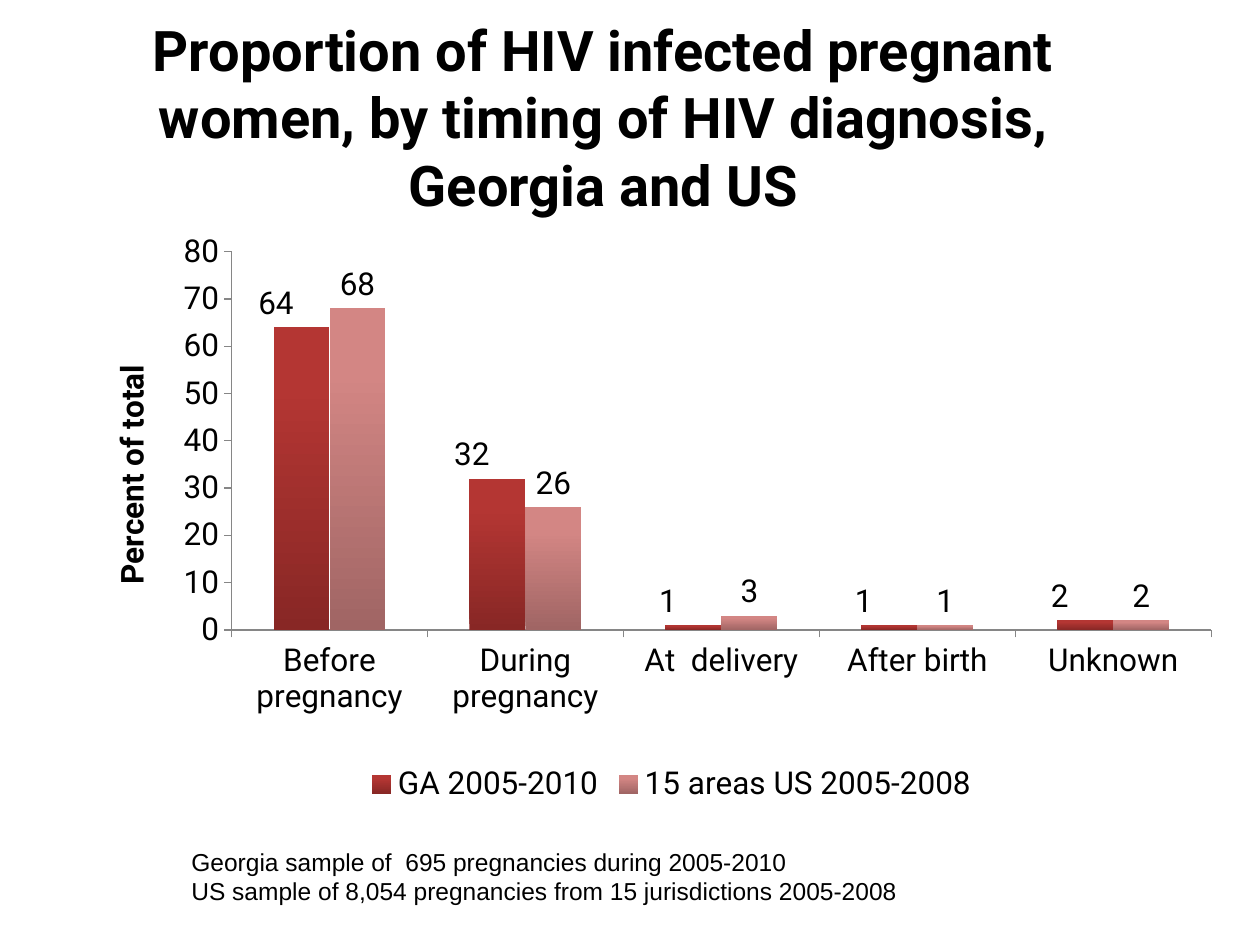
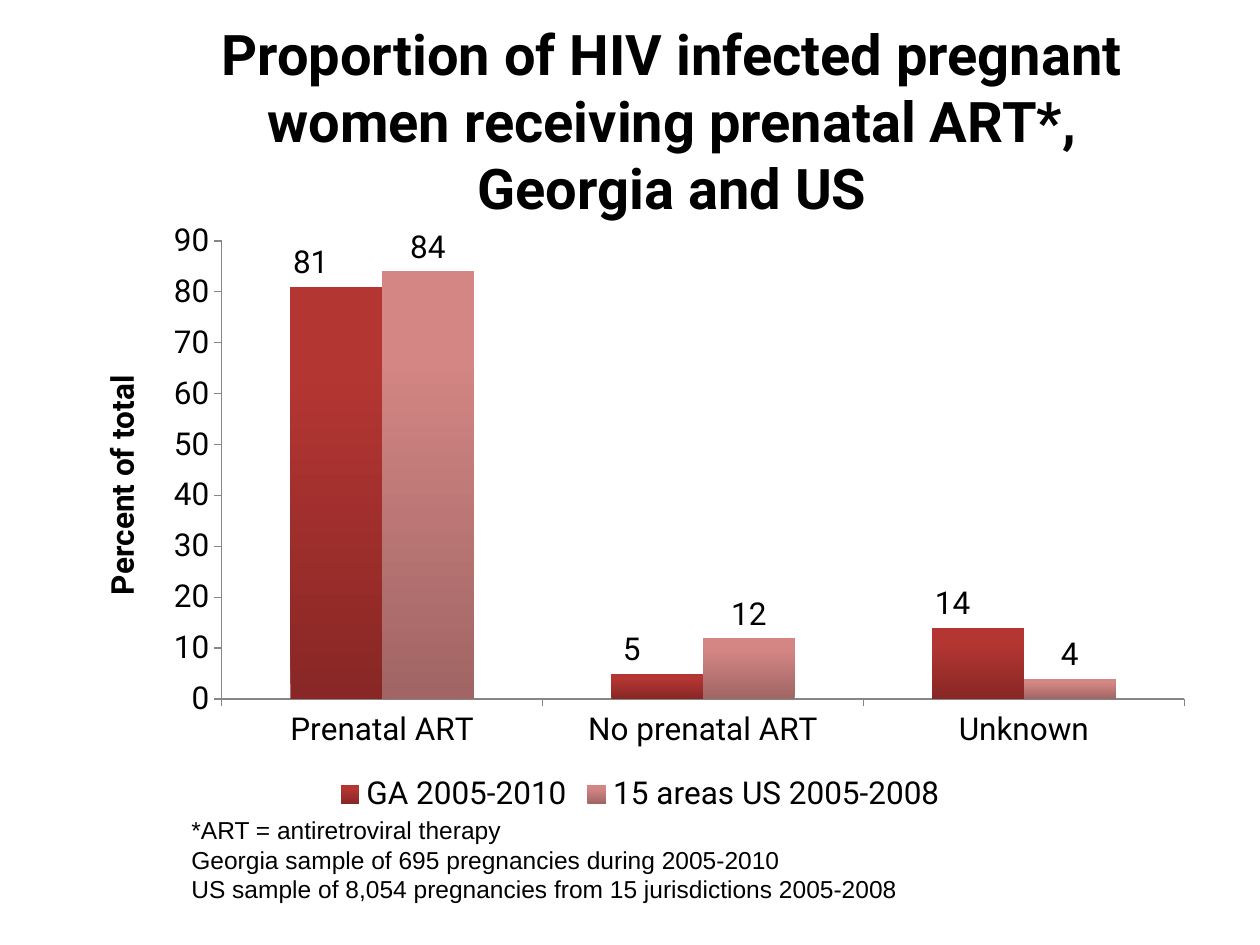
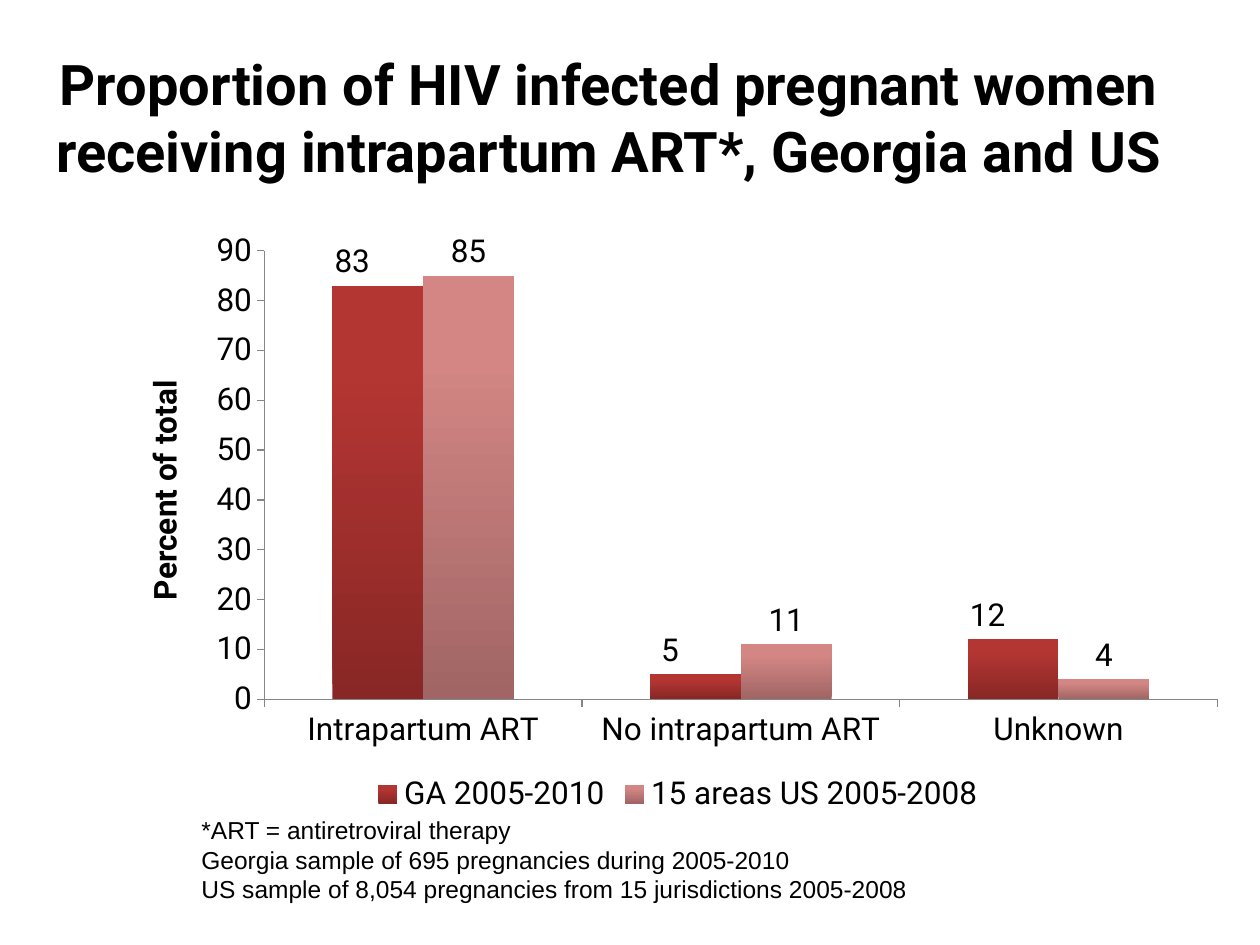
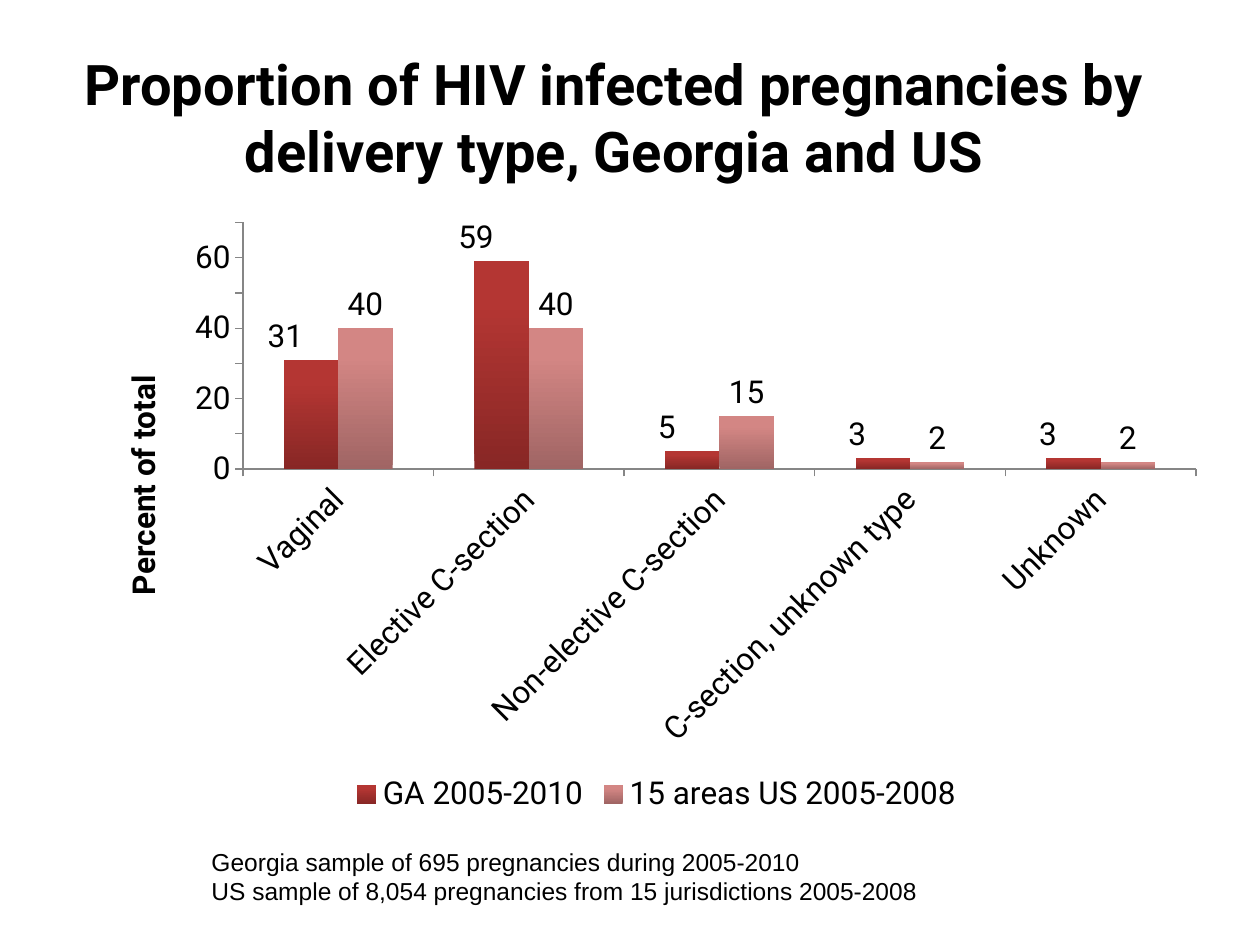
import pptx
import pptx.chart.data
import pptx.dml.color
import pptx.enum.chart
import pptx.enum.text
import pptx.util

Inches = pptx.util.Inches
Pt = pptx.util.Pt
RGBColor = pptx.dml.color.RGBColor

BLACK = RGBColor(0x00, 0x00, 0x00)
AXIS_GREY = RGBColor(0x86, 0x86, 0x86)
GEORGIA_DARK = RGBColor(0x88, 0x27, 0x25)
GEORGIA_RED = RGBColor(0xB4, 0x36, 0x33)
US_DARK = RGBColor(0xA0, 0x65, 0x64)
US_PINK = RGBColor(0xD3, 0x86, 0x84)

HEADING_FONT = "Roboto"
NOTE_FONT = "Arial"

GEORGIA_NAME = "GA 2005-2010"
US_NAME = "15 areas US 2005-2008"
SERIES_GRADIENTS = [(GEORGIA_DARK, GEORGIA_RED), (US_DARK, US_PINK)]
PADDED_FORMAT = "#\\ ?/?"

ART_NOTE = "*ART = antiretroviral therapy"
GEORGIA_NOTE = "Georgia sample of 695 pregnancies during 2005-2010"
US_NOTE = "US sample of 8,054 pregnancies from 15 jurisdictions 2005-2008"

SLIDES = [
    {
        "title": "Proportion of HIV infected pregnant women, by timing of HIV diagnosis, Georgia and US",
        "title_box": (0.33, 0.3, 8.92, 1.25),
        "chart_box": (0.83, 1.75, 9, 4.67),
        "categories": ["Before pregnancy", "During pregnancy", "At  delivery", "After birth", "Unknown"],
        "georgia": [64, 32, 1, 1, 2],
        "us": [68, 26, 3, 1, 2],
        "axis_top": 80,
        "plot": (0.112, 0.053, 0.864, 0.643),
        "notes": ["Georgia sample of  695 pregnancies during 2005-2010", US_NOTE],
        "notes_box": (1.42, 6.67, 8.08, 0.57),
    },
    {
        "title": "Proportion of HIV infected pregnant women receiving prenatal ART*, Georgia and US",
        "title_box": (1.42, 0.33, 7.83, 1.25),
        "chart_box": (0.58, 1.67, 9, 4.83),
        "categories": ["Prenatal ART", "No prenatal ART", "Unknown"],
        "georgia": [81, 5, 14],
        "us": [84, 12, 4],
        "axis_top": 90,
        "notes": [ART_NOTE, GEORGIA_NOTE, US_NOTE],
        "notes_box": (1.42, 6.42, 7.99, 0.81),
    },
    {
        "title": "Proportion of HIV infected pregnant women receiving intrapartum ART*, Georgia and US",
        "title_box": (0.17, 0.3, 9.33, 1.25),
        "chart_box": (0.92, 1.75, 8.92, 4.75),
        "categories": ["Intrapartum ART", "No intrapartum ART", "Unknown"],
        "georgia": [83, 5, 12],
        "us": [85, 11, 4],
        "axis_top": 90,
        "notes": [ART_NOTE, GEORGIA_NOTE, US_NOTE],
        "notes_box": (1.5, 6.42, 7.74, 0.81),
    },
    {
        "title": "Proportion of HIV infected pregnancies by delivery type, Georgia and US",
        "title_box": (0.5, 0.3, 8.75, 1.25),
        "chart_box": (0.75, 1.67, 8.92, 4.83),
        "categories": ["Vaginal", "Elective C-section", "Non-elective C-section",
                       "C-section, unknown type", "Unknown"],
        "georgia": [31, 59, 5, 3, 3],
        "us": [40, 40, 15, 2, 2],
        "axis_top": 70,
        "slanted": True,
        "notes": [GEORGIA_NOTE, US_NOTE],
        "notes_box": (1.58, 6.67, 7.91, 0.57),
    },
]


def style_font(font, name, size, bold=False):
    font.name = name
    font.size = Pt(size)
    font.bold = bold
    font.color.rgb = BLACK


def add_text(slide, box, lines, font_name, size, bold=False, align=None, anchor=None):
    frame = slide.shapes.add_textbox(*map(Inches, box)).text_frame
    frame.word_wrap = True
    frame.vertical_anchor = anchor
    frame.text = "\n".join(lines)
    for paragraph in frame.paragraphs:
        paragraph.alignment = align
        for run in paragraph.runs:
            style_font(run.font, font_name, size, bold)


def add_title(slide, box, title):
    add_text(slide, box, [title], HEADING_FONT, 32, True,
             pptx.enum.text.PP_ALIGN.CENTER, pptx.enum.text.MSO_ANCHOR.MIDDLE)


def style_series(series, gradient, number_format):
    fill = series.format.fill
    fill.gradient()
    fill.gradient_angle = 90
    for stop, color, position in zip(fill.gradient_stops, gradient, (0, 0.8)):
        stop.color.rgb = color
        stop.position = position
    labels = series.data_labels
    labels.show_value = True
    labels.number_format = number_format
    labels.number_format_is_linked = False
    labels.position = pptx.enum.chart.XL_LABEL_POSITION.OUTSIDE_END
    style_font(labels.font, HEADING_FONT, 18)


def style_axis(axis):
    axis.has_major_gridlines = False
    axis.major_tick_mark = pptx.enum.chart.XL_TICK_MARK.OUTSIDE
    axis.format.line.color.rgb = AXIS_GREY
    axis.format.line.width = Pt(0.75)
    style_font(axis.tick_labels.font, HEADING_FONT, 18)


def style_value_axis(axis, top):
    style_axis(axis)
    axis.minimum_scale = 0
    axis.maximum_scale = top
    axis.major_unit = 10
    title_frame = axis.axis_title.text_frame
    title_frame.text = "Percent of total"
    style_font(title_frame.paragraphs[0].runs[0].font, HEADING_FONT, 18, True)
    body = title_frame._txBody.bodyPr
    body.set("rot", "-5400000")
    body.set("vert", "horz")


def fix_plot_area(chart, plot):
    plot_area = chart._chartSpace.chart.plotArea
    for layout in plot_area.findall(pptx.oxml.ns.qn("c:layout")):
        plot_area.remove(layout)
    settings = [("layoutTarget", "inner"), ("xMode", "edge"), ("yMode", "edge")]
    settings += zip("xywh", plot)
    items = "".join(f'<c:{tag} val="{value}"/>' for tag, value in settings)
    plot_area.insert(0, pptx.oxml.parse_xml(
        f'<c:layout {pptx.oxml.ns.nsdecls("c")}><c:manualLayout>{items}</c:manualLayout></c:layout>'))


def add_percent_chart(slide, content):
    data = pptx.chart.data.CategoryChartData()
    data.categories = content["categories"]
    data.add_series(GEORGIA_NAME, content["georgia"])
    data.add_series(US_NAME, content["us"])
    chart = slide.shapes.add_chart(
        pptx.enum.chart.XL_CHART_TYPE.COLUMN_CLUSTERED,
        *map(Inches, content["chart_box"]), data).chart
    chart.has_title = False
    style_font(chart.font, HEADING_FONT, 18)

    columns = chart.plots[0]
    columns.gap_width = 150
    columns.overlap = 0
    columns.vary_by_categories = False
    for series, gradient, number_format in zip(
            columns.series, SERIES_GRADIENTS, (PADDED_FORMAT, "General")):
        style_series(series, gradient, number_format)

    style_axis(chart.category_axis)
    style_value_axis(chart.value_axis, content["axis_top"])
    if content.get("slanted"):
        label_text = chart.category_axis._element.find(pptx.oxml.ns.qn("c:txPr"))
        label_text.find(pptx.oxml.ns.qn("a:bodyPr")).set("rot", "-2700000")

    chart.has_legend = True
    chart.legend.position = pptx.enum.chart.XL_LEGEND_POSITION.BOTTOM
    chart.legend.include_in_layout = False
    style_font(chart.legend.font, HEADING_FONT, 18)
    if "plot" in content:
        fix_plot_area(chart, content["plot"])


def add_chart_slide(presentation, content):
    slide = presentation.slides.add_slide(presentation.slide_layouts[6])
    add_title(slide, content["title_box"], content["title"])
    add_percent_chart(slide, content)
    add_text(slide, content["notes_box"], content["notes"], NOTE_FONT, 14)


def main():
    presentation = pptx.Presentation()
    presentation.slide_width = Inches(10)
    presentation.slide_height = Inches(7.5)
    for content in SLIDES:
        add_chart_slide(presentation, content)
    presentation.save("out.pptx")


if __name__ == "__main__":
    main()
